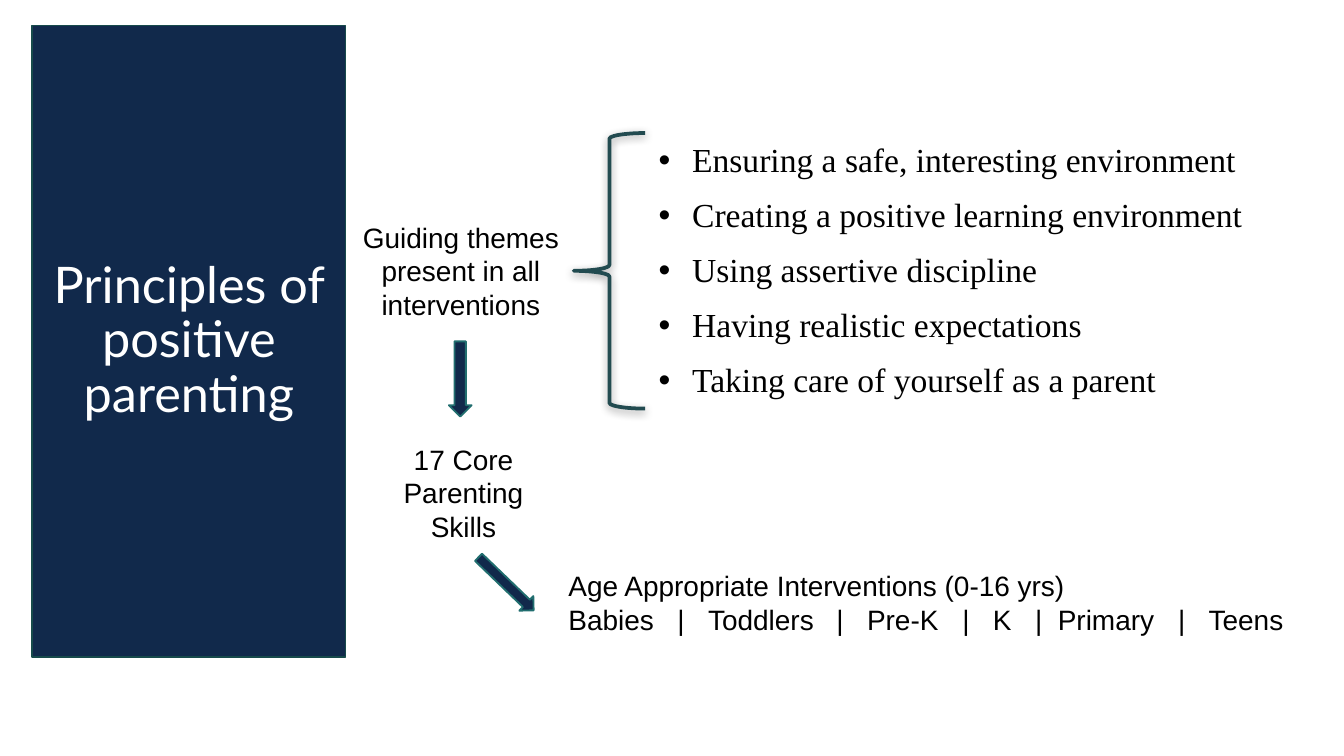
from lxml import etree
from pptx import Presentation
from pptx.dml.color import RGBColor
from pptx.enum.shapes import MSO_SHAPE
from pptx.enum.text import MSO_ANCHOR, MSO_AUTO_SIZE, PP_ALIGN
from pptx.oxml.ns import qn
from pptx.util import Pt

NAVY = RGBColor(0x11, 0x29, 0x4B)
PANEL_EDGE = RGBColor(0x17, 0x4A, 0x4B)
ARROW_EDGE = RGBColor(0x21, 0x6E, 0x6F)
BRACE_EDGE = RGBColor(0x22, 0x4B, 0x50)
WHITE = RGBColor(0xFF, 0xFF, 0xFF)
BLACK = RGBColor(0, 0, 0)

LEFT, CENTER = PP_ALIGN.LEFT, PP_ALIGN.CENTER
TOP, MIDDLE = MSO_ANCHOR.TOP, MSO_ANCHOR.MIDDLE
NO_FIT, GROW = MSO_AUTO_SIZE.NONE, MSO_AUTO_SIZE.SHAPE_TO_FIT_TEXT
BRACE, DOWN, RIGHT = MSO_SHAPE.LEFT_BRACE, MSO_SHAPE.DOWN_ARROW, MSO_SHAPE.RIGHT_ARROW

THEMES = [
    "Ensuring a safe, interesting environment",
    "Creating a positive learning environment",
    "Using assertive discipline",
    "Having realistic expectations",
    "Taking care of yourself as a parent",
]
AGE_GROUPS = ["Babies", "Toddlers", "Pre-K", "K", "Primary", "Teens"]
# Tab stops in points: each divider bar, then the age group after it
AGE_STOPS = [58.4, 74.8, 143.6, 160, 211, 227.4, 250, 262.2, 326.6, 343]


class ParentingSlide:
    title_font, list_font, label_font = "Lato", "Times New Roman", "Arial"
    title_size, list_size, label_size = 27, 18, 15

    def __init__(self, deck):
        self.slide = deck.slides.add_slide(deck.slide_layouts[1])

    def place(self, shape, box):
        shape.left, shape.top, shape.width, shape.height = map(Pt, box)

    def run(self, paragraph, text, font, size, color):
        run = paragraph.add_run()
        run.text = text
        run.font.name, run.font.size = font, Pt(size)
        run.font.color.rgb = color

    def outline(self, shape, color, width):
        shape.line.color.rgb = color
        shape.line.width = Pt(width)

    def title(self, text, box):
        panel = self.slide.shapes.title
        self.place(panel, box)
        panel.fill.solid()
        panel.fill.fore_color.rgb = NAVY
        self.outline(panel, PANEL_EDGE, 1)
        frame = panel.text_frame
        frame.auto_size, frame.vertical_anchor = NO_FIT, MIDDLE
        heading = frame.paragraphs[0]
        heading.alignment, heading.line_spacing = CENTER, 0.9
        self.run(heading, text, self.title_font, self.title_size, WHITE)

    def bullets(self, items, box):
        body = self.slide.placeholders[1]
        self.place(body, box)
        frame = body.text_frame
        frame.auto_size, frame.vertical_anchor = NO_FIT, TOP
        for index, item in enumerate(items):
            point = frame.add_paragraph() if index else frame.paragraphs[0]
            properties = point._p.get_or_add_pPr()
            properties.set("marL", str(Pt(18)))
            properties.set("indent", str(-Pt(18)))
            etree.SubElement(properties, qn("a:buChar"), char="•")
            point.alignment, point.line_spacing = LEFT, 0.9
            point.space_before = Pt(10 if index else 0)
            self.run(point, item, self.list_font, self.list_size, BLACK)

    def label(self, lines, box, align=CENTER, stops=()):
        frame = self.slide.shapes.add_textbox(*map(Pt, box)).text_frame
        frame.word_wrap, frame.auto_size = True, GROW
        paragraph = frame.paragraphs[0]
        paragraph.alignment = align
        if stops:
            tabs = etree.SubElement(paragraph._p.get_or_add_pPr(), qn("a:tabLst"))
            for stop in stops:
                etree.SubElement(tabs, qn("a:tab"), pos=str(Pt(stop)), algn="l")
        for index, line in enumerate(lines):
            if index:
                paragraph.add_line_break()
            self.run(paragraph, line, self.label_font, self.label_size, BLACK)

    def arrow(self, kind, box, rotation=0):
        arrow = self.slide.shapes.add_shape(kind, *map(Pt, box))
        arrow.shadow.inherit = False
        arrow.fill.solid()
        arrow.fill.fore_color.rgb = NAVY
        self.outline(arrow, ARROW_EDGE, 1)
        arrow.rotation = rotation

    def brace(self, box):
        """Draw a left brace with a soft shadow below it."""
        brace = self.slide.shapes.add_shape(BRACE, *map(Pt, box))
        brace.adjustments[0], brace.adjustments[1] = 0.08, 0.5
        brace.fill.background()
        self.outline(brace, BRACE_EDGE, 2)
        brace.shadow.inherit = False
        effects = brace._element.spPr.find(qn("a:effectLst"))
        shadow = etree.SubElement(
            effects, qn("a:outerShdw"), blurRad=str(Pt(5)), dist=str(Pt(1.6)),
            dir="5400000", rotWithShape="0")
        tint = etree.SubElement(shadow, qn("a:srgbClr"), val=str(BLACK))
        etree.SubElement(tint, qn("a:alpha"), val="38000")


def main():
    deck = Presentation()
    deck.slide_width, deck.slide_height = Pt(720), Pt(405)
    page = ParentingSlide(deck)
    page.title("Principles of positive parenting", (17.3, 13.7, 167.8, 338.4))
    page.bullets(THEMES, (345.6, 73.4, 432, 165.6))
    page.label(["Guiding themes present in all interventions"],
               (181.4, 114.5, 131, 61.9))
    page.brace((307.4, 71.3, 38.2, 147.6))
    page.arrow(DOWN, (240.5, 182.9, 12.2, 40.3))
    page.label(["17 Core Parenting Skills"], (195.8, 233.3, 105.1, 61.9))
    page.arrow(RIGHT, (250.6, 307.4, 41, 10.8), rotation=43.9)
    page.label(["Age Appropriate Interventions (0-16 yrs)", "\t|\t".join(AGE_GROUPS)],
               (297.4, 301, 399.6, 43.9), LEFT, AGE_STOPS)
    deck.save("out.pptx")


if __name__ == "__main__":
    main()
